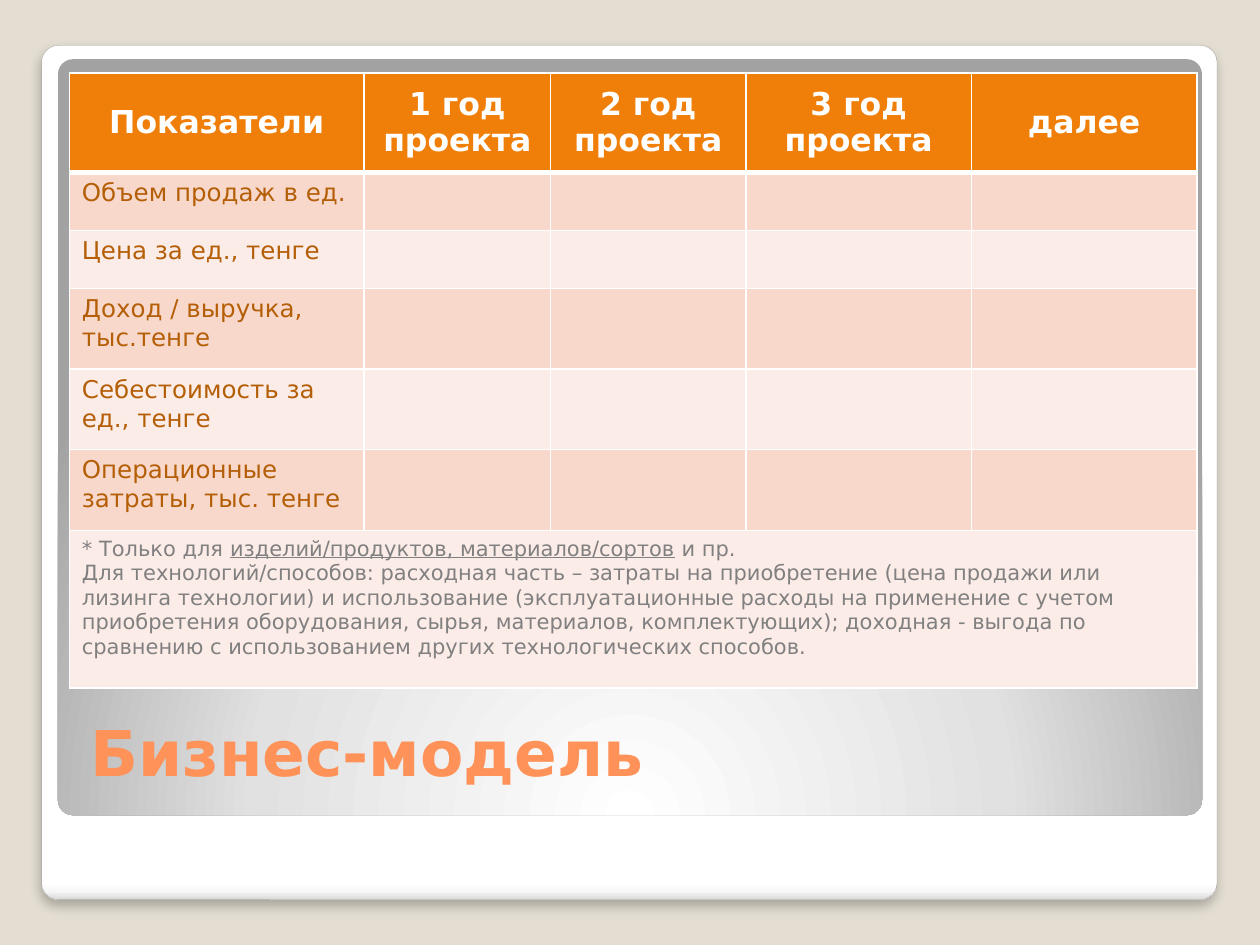
import pptx
import pptx.util
import pptx.dml.color
import pptx.enum.shapes
import pptx.enum.text
import pptx.oxml
import pptx.oxml.ns

Inches = pptx.util.Inches
Pt = pptx.util.Pt
RGBColor = pptx.dml.color.RGBColor
ALIGN = pptx.enum.text.PP_ALIGN
ANCHOR = pptx.enum.text.MSO_ANCHOR

FONT = "DejaVu Sans"
NS = pptx.oxml.ns.nsdecls("a")
WHITE = RGBColor(0xFF, 0xFF, 0xFF)
BACKGROUND = RGBColor(0xE3, 0xDE, 0xD1)
OUTLINE = RGBColor(0xA4, 0xA4, 0xA4)
TITLE = RGBColor(0xFF, 0x92, 0x58)
HEADER = RGBColor(0xF0, 0x7F, 0x09)
BAND_DARK = RGBColor(0xF9, 0xD8, 0xCC)
BAND_LIGHT = RGBColor(0xFC, 0xEC, 0xE7)
LABEL = RGBColor(0xB4, 0x5F, 0x07)
NOTE = RGBColor(0x80, 0x80, 0x80)


def add_text(p, text, size, color, bold=False, underline=False, align=None):
    r = p.add_run()
    r.text = text
    r.font.name = FONT
    r.font.size = Pt(size)
    r.font.bold = bold
    r.font.underline = underline
    r.font.color.rgb = color
    if align is not None:
        p.alignment = align


def add_panel(s, left, top, width, height, stops, direction):
    sp = s.shapes.add_shape(
        pptx.enum.shapes.MSO_SHAPE.ROUNDED_RECTANGLE,
        Inches(left), Inches(top), Inches(width), Inches(height))
    sp.adjustments[0] = 0.02
    sp.shadow.inherit = False
    sp.line.fill.background()
    stop_xml = "".join(
        f'<a:gs pos="{pos * 1000}"><a:srgbClr val="{color}"/></a:gs>'
        for pos, color in stops)
    sp._element.spPr.find(pptx.oxml.ns.qn("a:prstGeom")).addnext(pptx.oxml.parse_xml(
        f'<a:gradFill {NS} rotWithShape="1"><a:gsLst>{stop_xml}</a:gsLst>{direction}</a:gradFill>'))
    return sp


prs = pptx.Presentation()
prs.slide_width = Inches(10)
prs.slide_height = Inches(7.5)
s = prs.slides.add_slide(prs.slide_layouts[6])
s.background.fill.solid()
s.background.fill.fore_color.rgb = BACKGROUND

card = add_panel(
    s, 0.33, 0.36, 9.33, 6.78,
    [(0, "FFFFFF"), (98, "FFFFFF"), (99, "F7F7F7"), (100, "DADADA")],
    '<a:lin ang="5400000" scaled="0"/>')
card.line.color.rgb = OUTLINE
card.line.width = Pt(0.16)
card._element.spPr.find(pptx.oxml.ns.qn("a:effectLst")).append(pptx.oxml.parse_xml(
    f'<a:outerShdw {NS} blurRad="{Pt(6)}" dist="{Pt(4)}" dir="5400000" rotWithShape="0">'
    '<a:srgbClr val="000000"><a:alpha val="25000"/></a:srgbClr></a:outerShdw>'))

add_panel(
    s, 0.46, 0.47, 9.08, 6,
    [(0, "FFFFFF"), (55, "E1E1E1"), (100, "A2A2A2")],
    '<a:path path="circle"><a:fillToRect l="50000" t="175000" r="50000" b="-75000"/></a:path>')

title = s.shapes.add_textbox(Inches(0.62), Inches(5.16), Inches(8.95), Inches(1.15))
tf = title.text_frame
tf.word_wrap = True
tf.vertical_anchor = ANCHOR.BOTTOM
add_text(tf.paragraphs[0], "Бизнес-модель", 36, TITLE, bold=True)

headers = ["Показатели", "1 год проекта", "2 год проекта", "3 год проекта", "далее"]
labels = [
    "Объем продаж в ед.",
    "Цена за ед., тенге",
    "Доход / выручка, тыс.тенге",
    "Себестоимость за ед., тенге",
    "Операционные затраты, тыс. тенге",
]
col_widths = [2.34, 1.48, 1.55, 1.79, 1.79]
row_heights = [0.79, 0.46, 0.46, 0.64, 0.64, 0.64, 1.25]

table = s.shapes.add_table(
    len(row_heights), len(col_widths),
    Inches(0.55), Inches(0.58), Inches(8.95), Inches(sum(row_heights))).table
for col, width in zip(table.columns, col_widths):
    col.width = Inches(width)
for row, height in zip(table.rows, row_heights):
    row.height = Inches(height)

for i, row in enumerate(table.rows):
    for cell in row.cells:
        cell.fill.solid()
        cell.fill.fore_color.rgb = HEADER if i == 0 else BAND_DARK if i % 2 else BAND_LIGHT
        for k, side in enumerate(("lnL", "lnR", "lnT", "lnB")):
            thick = (i == 0 and side == "lnB") or (i == 1 and side == "lnT")
            cell._tc.get_or_add_tcPr().insert(k, pptx.oxml.parse_xml(
                f'<a:{side} {NS} w="{Pt(3 if thick else 1)}"><a:solidFill>'
                f'<a:srgbClr val="{WHITE}"/></a:solidFill></a:{side}>'))

for j, text in enumerate(headers):
    cell = table.cell(0, j)
    cell.vertical_anchor = ANCHOR.MIDDLE
    add_text(cell.text_frame.paragraphs[0], text, 18, WHITE, bold=True, align=ALIGN.CENTER)
for i, text in enumerate(labels, 1):
    add_text(table.cell(i, 0).text_frame.paragraphs[0], text, 14, LABEL)

note = table.cell(6, 0)
note.merge(table.cell(6, 4))
tf = note.text_frame
p = tf.paragraphs[0]
add_text(p, "* Только для ", 12, NOTE)
add_text(p, "изделий/продуктов, материалов/сортов", 12, NOTE, underline=True)
add_text(p, " и пр.", 12, NOTE)
add_text(
    tf.add_paragraph(),
    "Для технологий/способов: расходная часть – затраты на приобретение "
    "(цена продажи или лизинга технологии) и использование (эксплуатационные "
    "расходы на применение с учетом приобретения оборудования, сырья, материалов, "
    "комплектующих); доходная - выгода по сравнению с использованием других "
    "технологических способов.", 12, NOTE)

prs.save("out.pptx")
